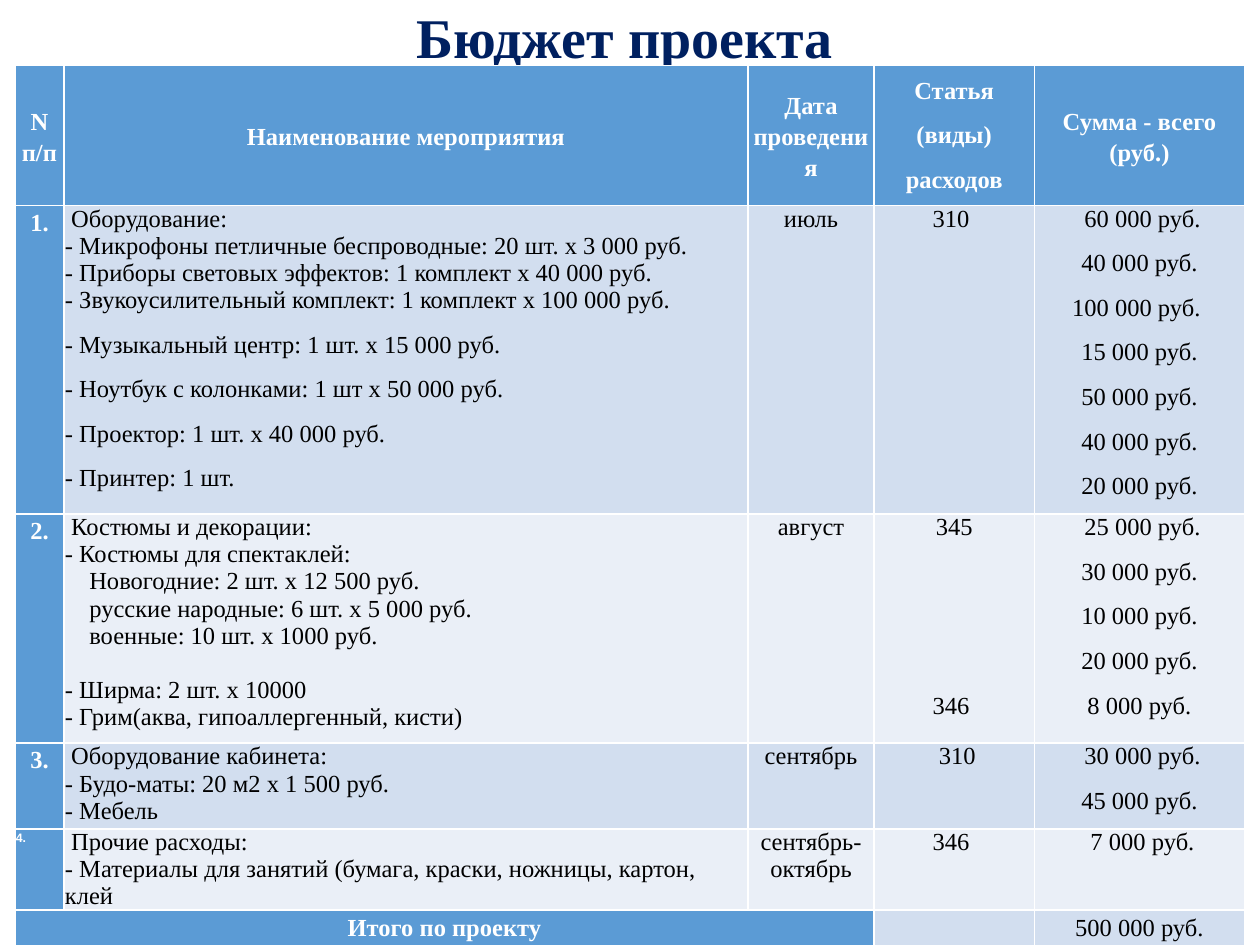
from dataclasses import dataclass

from pptx import Presentation
from pptx.dml.color import RGBColor
from pptx.enum.text import MSO_ANCHOR, PP_ALIGN
from pptx.util import Cm, Pt

LEFT, CENTER = PP_ALIGN.LEFT, PP_ALIGN.CENTER
TOP, MIDDLE = MSO_ANCHOR.TOP, MSO_ANCHOR.MIDDLE


@dataclass(frozen=True)
class Theme:
    font: str = "Times New Roman"
    small_font: str = "Arial"
    title_size: float = 32
    size: float = 14
    small_size: float = 7
    title: RGBColor = RGBColor(0x00, 0x20, 0x60)
    text: RGBColor = RGBColor(0x00, 0x00, 0x00)
    white: RGBColor = RGBColor(0xFF, 0xFF, 0xFF)
    head: RGBColor = RGBColor(0x5B, 0x9B, 0xD5)
    bands: tuple = (RGBColor(0xD2, 0xDE, 0xEF), RGBColor(0xEA, 0xEF, 0xF7))


@dataclass(frozen=True)
class Line:
    """One paragraph; spacing in points, indent in centimetres."""
    text: str
    after: float = 10
    before: float = 0
    indent: float = 0


def tight(*texts, indent=0):
    return [Line(t, after=0, indent=indent) for t in texts]


def spaced(*texts):
    return [Line(t) for t in texts]


THEME = Theme()
TITLE = "Бюджет проекта"
COL_WIDTHS = (0.99, 13.79, 2.54, 3.23, 4.24)
ROW_HEIGHTS = (2.82, 6.22, 4.62, 1.73, 1.24, 0.71)

HEADER = [
    spaced("N п/п"),
    spaced("Наименование мероприятия"),
    spaced("Дата проведения"),
    spaced("Статья", "(виды)", "расходов"),
    spaced("Сумма - всего (руб.)"),
]

# Each item: number, contents, date, expense codes, sums
ITEMS = [
    [
        spaced("1."),
        tight(" Оборудование:",
              "- Микрофоны петличные беспроводные: 20 шт. х 3 000 руб.",
              "- Приборы световых эффектов: 1 комплект х 40 000 руб.")
        + spaced("- Звукоусилительный комплект: 1 комплект х 100 000 руб.",
                 "- Музыкальный центр: 1 шт. х 15 000 руб.",
                 "- Ноутбук с колонками: 1 шт х 50 000 руб.",
                 "- Проектор: 1 шт. х 40 000 руб.",
                 "- Принтер: 1 шт."),
        spaced("июль"),
        spaced("310 "),
        spaced(" 60 000 руб.", "40 000 руб.", "100 000 руб. ", "15 000 руб.",
               "50 000 руб.", "40 000 руб.", "20 000 руб."),
    ],
    [
        tight("2."),
        tight(" Костюмы и декорации:", "- Костюмы для спектаклей:")
        + tight("Новогодние: 2 шт. х 12 500 руб.",
                "русские народные: 6 шт. х 5 000 руб.",
                "военные: 10 шт. х 1000 руб.", indent=0.49)
        + [Line("- Ширма: 2 шт. х 10000", after=0, before=15.5)]
        + tight("- Грим(аква, гипоаллергенный, кисти)"),
        spaced("август"),
        [Line("345"), Line("346 ", before=76.5)],
        spaced(" 25 000 руб.", "30 000 руб.", "10 000 руб.", "20 000 руб.",
               "8 000 руб."),
    ],
    [
        tight("3."),
        tight(" Оборудование кабинета:", "- Будо-маты: 20 м2 х 1 500 руб.",
              "- Мебель"),
        spaced("сентябрь"),
        spaced(" 310"),
        spaced(" 30 000 руб.", "45 000 руб."),
    ],
    [
        tight("4."),
        tight(" Прочие расходы:",
              "- Материалы для занятий (бумага, краски, ножницы, картон, клей"),
        spaced("сентябрь-октябрь"),
        spaced("346 "),
        spaced(" 7 000 руб."),
    ],
]
TOTAL = [spaced("Итого по проекту"), [], [], [], spaced("500 000 руб.")]


def style_run(r, font, size, color, bold):
    r.font.name, r.font.size, r.font.bold = font, Pt(size), bold
    r.font.color.rgb = color


def fill_cell(cell, lines, fill, color, bold=False, align=CENTER, anchor=TOP,
              spacing=1.0, font=THEME.font, size=THEME.size):
    cell.fill.solid()
    cell.fill.fore_color.rgb = fill
    cell.margin_left = cell.margin_right = Cm(0.02)
    cell.margin_top = cell.margin_bottom = 0
    cell.vertical_anchor = anchor
    tf = cell.text_frame
    tf.text = "\n".join(line.text for line in lines)
    for p, line in zip(tf.paragraphs, lines):
        p.alignment, p.line_spacing = align, spacing
        p.space_before, p.space_after = Pt(line.before), Pt(line.after)
        if line.indent:
            p._p.get_or_add_pPr().set("marL", str(Cm(line.indent)))
        for r in p.runs:
            style_run(r, font, size, color, bold)


def add_title(s, left, top, width, height):
    title = s.shapes.title
    title.left, title.top = Cm(left), Cm(top)
    title.width, title.height = Cm(width), Cm(height)
    tf = title.text_frame
    tf.text = TITLE
    tf.vertical_anchor = MIDDLE
    p = tf.paragraphs[0]
    p.alignment, p.line_spacing = CENTER, 0.9
    style_run(p.runs[0], THEME.font, THEME.title_size, THEME.title, True)


def add_budget(s, left, top):
    table = s.shapes.add_table(
        len(ROW_HEIGHTS), len(COL_WIDTHS), Cm(left), Cm(top),
        Cm(sum(COL_WIDTHS)), Cm(sum(ROW_HEIGHTS))).table
    table.first_col = True
    for col, width in zip(table.columns, COL_WIDTHS):
        col.width = Cm(width)
    for row, height in zip(table.rows, ROW_HEIGHTS):
        row.height = Cm(height)

    head = dict(fill=THEME.head, color=THEME.white, bold=True)

    # Header row
    for c, lines in enumerate(HEADER):
        fill_cell(table.cell(0, c), lines, anchor=MIDDLE,
                  spacing=1.0 if len(lines) > 1 else 1.15, **head)

    # Item rows
    for i, (number, *parts) in enumerate(ITEMS):
        small = dict(align=LEFT, font=THEME.small_font, size=THEME.small_size)
        fill_cell(table.cell(i + 1, 0), number, spacing=1.15, **head,
                  **(small if i == len(ITEMS) - 1 else {}))
        for c, lines in enumerate(parts, start=1):
            fill_cell(table.cell(i + 1, c), lines, THEME.bands[i % 2],
                      THEME.text, align=LEFT if c == 1 else CENTER)

    # Total row
    last = len(ROW_HEIGHTS) - 1
    for c, lines in enumerate(TOTAL):
        look = head if c < 3 else dict(fill=THEME.bands[0], color=THEME.text)
        fill_cell(table.cell(last, c), lines, spacing=1.15, **look)
    table.cell(last, 0).merge(table.cell(last, 2))


def main():
    prs = Presentation()
    prs.slide_width, prs.slide_height = Cm(25.4), Cm(19.05)
    s = prs.slides.add_slide(prs.slide_layouts[5])
    add_title(s, 1.5, -0.08, 22.2, 1.8)
    add_budget(s, 0.3, 1.32)
    prs.save("out.pptx")


if __name__ == "__main__":
    main()
